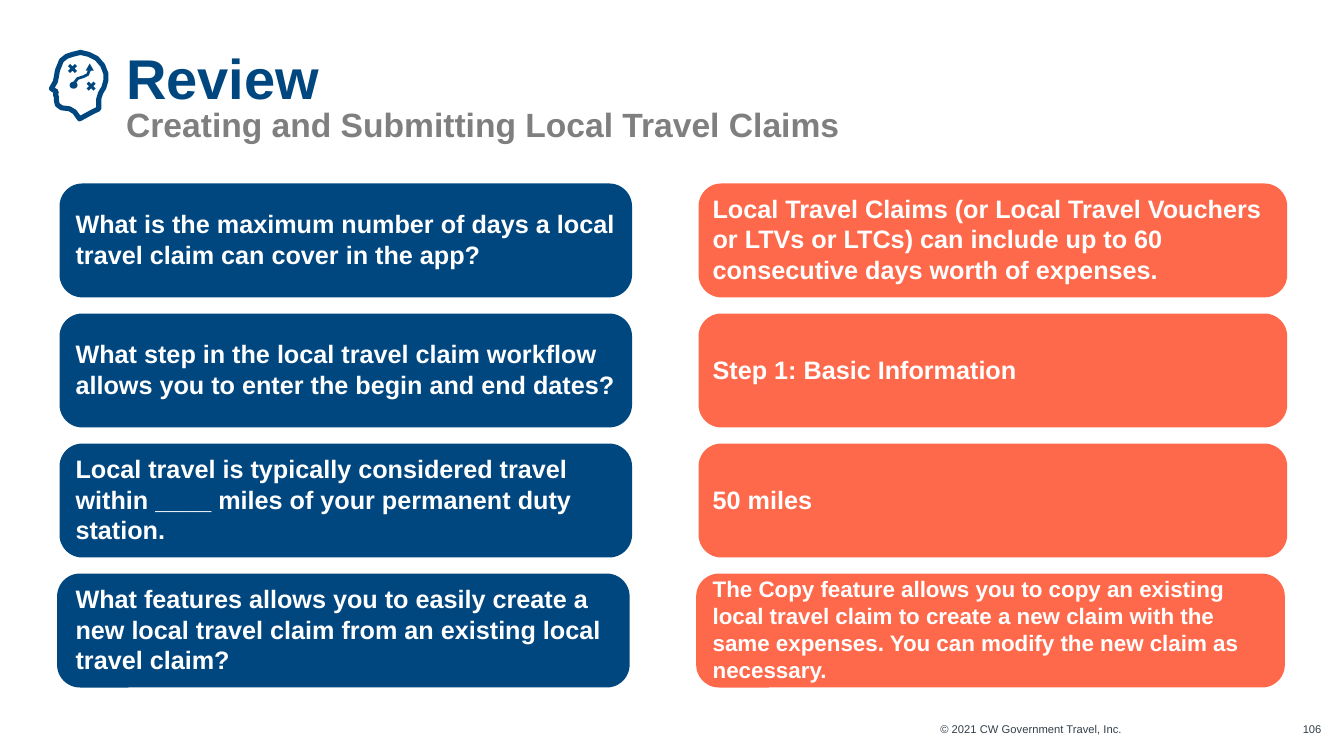
"""Build the review slide on creating and submitting local travel claims."""
from typing import NamedTuple

import pptx
import pptx.dml.color
import pptx.enum.shapes
import pptx.enum.text
import pptx.util

COLOURS = {"navy": "00467F", "coral": "FF694B", "grey": "7F7F7F", "slate": "333F48", "white": "FFFFFF"}
FONT = "Arial"
SHAPES = pptx.enum.shapes.MSO_SHAPE
ALIGN = pptx.enum.text.PP_ALIGN
ANCHOR = pptx.enum.text.MSO_ANCHOR


class Column(NamedTuple):
    """A column of cards, in percent of the slide width."""
    left: float
    width: float
    colour: str
    inset_left: float
    inset_right: float


class Review(NamedTuple):
    """A question with its answer."""
    question: str
    answer: str
    answer_size: int = 18
    nudge: float = 0


class Mark(NamedTuple):
    """A solid part of the icon, on the icon's grid."""
    preset: pptx.enum.shapes.MSO_SHAPE
    left: float
    top: float
    width: float
    height: float


class Footer(NamedTuple):
    """A footer text, in percent of the slide width."""
    text: str
    left: float
    width: float


QUESTIONS = Column(4.43, 42.6, "navy", 0.7, 0)
ANSWERS = Column(51.98, 43.8, "coral", 0.55, 0.75)
FIRST_ROW, ROW_PITCH, ROW_HEIGHT = 24.27, 17.2, 15.07
REVIEWS = [
    Review("What is the maximum number of days a local travel claim can cover in the app?",
           "Local Travel Claims (or Local Travel Vouchers or LTVs or LTCs) can include up to 60 "
           "consecutive days worth of expenses."),
    Review("What step in the local travel claim workflow allows you to enter the begin and end dates?",
           "Step 1: Basic Information"),
    Review("Local travel is typically considered travel within ____ miles of your permanent duty station.",
           "50 miles"),
    Review("What features allows you to easily create a new local travel claim from an existing local "
           "travel claim?",
           "The Copy feature allows you to copy an existing local travel claim to create a new claim "
           "with the same expenses. You can modify the new claim as necessary.", 16, -0.18),
]
FOOTERS = [Footer("© 2021 CW Government Travel, Inc.", 62.85, 20.63), Footer("106", 96.6, 1.73)]

ICON_LEFT, ICON_TOP = 3.6, 6.67
HEAD = [(57, 23), (57, 30), (55, 37), (52, 42), (50, 48), (49.5, 52), (50.5, 57.5), (42, 61.5),
        (31, 67.5), (26, 61), (21, 58.5), (13, 57), (9, 54), (8, 50), (8, 46), (7, 44), (7.5, 41),
        (3, 38.5), (7, 31), (8.5, 26), (9, 20), (13, 10.5), (18, 5.5), (24, 3.5), (32, 2.5),
        (40, 4), (48, 8.5), (54, 15)]
ROUTE = [(25, 35), (25.5, 32), (29, 28.5), (35, 26.5), (39, 23.5), (41, 19)]
MARKS = [Mark(SHAPES.MATH_MULTIPLY, 36, 29, 13, 13), Mark(SHAPES.MATH_MULTIPLY, 17.5, 11.5, 13, 13),
         Mark(SHAPES.OVAL, 21, 31, 8, 7), Mark(SHAPES.ISOSCELES_TRIANGLE, 37, 13, 8, 7)]

deck = pptx.Presentation()
deck.slide_width = pptx.util.Inches(13.33)
deck.slide_height = pptx.util.Inches(7.5)
ICON_STEP = deck.slide_height / 750
slide = deck.slides.add_slide(deck.slide_layouts[5])


def across(share: float) -> int:
    """Return a percentage of the slide width."""
    return round(deck.slide_width * share / 100)


def down(share: float) -> int:
    """Return a percentage of the slide height."""
    return round(deck.slide_height * share / 100)


def rgb(name: str) -> pptx.dml.color.RGBColor:
    """Return a named colour."""
    return pptx.dml.color.RGBColor.from_string(COLOURS[name])


def clear_margins(frame) -> None:
    """Wrap the text and remove its margins."""
    frame.word_wrap = True
    frame.auto_size = pptx.enum.text.MSO_AUTO_SIZE.NONE
    frame.margin_left = frame.margin_right = frame.margin_top = frame.margin_bottom = 0


def style(font, size: float, colour: str) -> None:
    """Set size, typeface and colour of a font."""
    font.name = FONT
    font.size = pptx.util.Pt(size)
    font.color.rgb = rgb(colour)


def fill_solid(shape, colour: str) -> None:
    """Give a shape a plain fill without line or shadow."""
    shape.shadow.inherit = False
    shape.fill.solid()
    shape.fill.fore_color.rgb = rgb(colour)
    shape.line.fill.background()


def draw_stroke(points: list[tuple[float, float]], weight: float, close: bool) -> None:
    """Draw a line of the icon through points on its grid."""
    builder = slide.shapes.build_freeform(*points[0], scale=ICON_STEP)
    builder.add_line_segments(points[1:], close=close)
    stroke = builder.convert_to_shape(across(ICON_LEFT), down(ICON_TOP))
    stroke.shadow.inherit = False
    stroke.fill.background()
    stroke.line.color.rgb = rgb("navy")
    stroke.line.width = pptx.util.Pt(weight)


def draw_icon() -> None:
    """Draw the head with a plan in it."""
    draw_stroke(HEAD, 3.6, True)
    draw_stroke(ROUTE, 2, False)
    for mark in MARKS:
        left, top, width, height = (round(side * ICON_STEP) for side in mark[1:])
        fill_solid(slide.shapes.add_shape(mark.preset, across(ICON_LEFT) + left, down(ICON_TOP) + top,
                                          width, height), "navy")


def draw_title() -> None:
    """Place the title and its subtitle."""
    title = slide.shapes.title
    title.left, title.top, title.width, title.height = across(9.38), down(7.07), across(86.48), down(12.27)
    frame = title.text_frame
    clear_margins(frame)
    frame.vertical_anchor = ANCHOR.TOP
    heading = frame.paragraphs[0]
    heading.alignment = ALIGN.LEFT
    heading.line_spacing = 0.85
    heading.font.bold = True
    topic = heading.add_run()
    topic.text = "Review"
    style(topic.font, 40, "navy")
    heading.add_line_break()
    subject = heading.add_run()
    subject.text = "Creating and Submitting Local Travel Claims"
    style(subject.font, 24, "grey")


def draw_card(column: Column, row: int, text: str, size: int, nudge: float) -> None:
    """Draw one rounded card with its text."""
    card = slide.shapes.add_shape(SHAPES.ROUNDED_RECTANGLE, across(column.left + nudge),
                                  down(FIRST_ROW + row * ROW_PITCH), across(column.width), down(ROW_HEIGHT))
    card.adjustments[0] = 0.2
    fill_solid(card, column.colour)
    frame = card.text_frame
    clear_margins(frame)
    frame.margin_left = across(column.inset_left - nudge)
    frame.margin_right = across(column.inset_right)
    frame.margin_bottom = down(0.4)
    frame.vertical_anchor = ANCHOR.MIDDLE
    paragraph = frame.paragraphs[0]
    paragraph.text = text
    paragraph.alignment = ALIGN.LEFT
    paragraph.font.bold = True
    style(paragraph.font, size, "white")


def draw_footer(footer: Footer) -> None:
    """Draw one right-aligned footer text."""
    frame = slide.shapes.add_textbox(across(footer.left), down(95.6), across(footer.width), down(1.87)).text_frame
    clear_margins(frame)
    paragraph = frame.paragraphs[0]
    paragraph.text = footer.text
    paragraph.alignment = ALIGN.RIGHT
    style(paragraph.font, 8, "slate")


def main() -> None:
    """Draw every part and save the deck."""
    draw_icon()
    draw_title()
    for row, review in enumerate(REVIEWS):
        draw_card(QUESTIONS, row, review.question, 18, review.nudge)
        draw_card(ANSWERS, row, review.answer, review.answer_size, review.nudge)
    for footer in FOOTERS:
        draw_footer(footer)
    deck.save("out.pptx")


if __name__ == "__main__":
    main()
